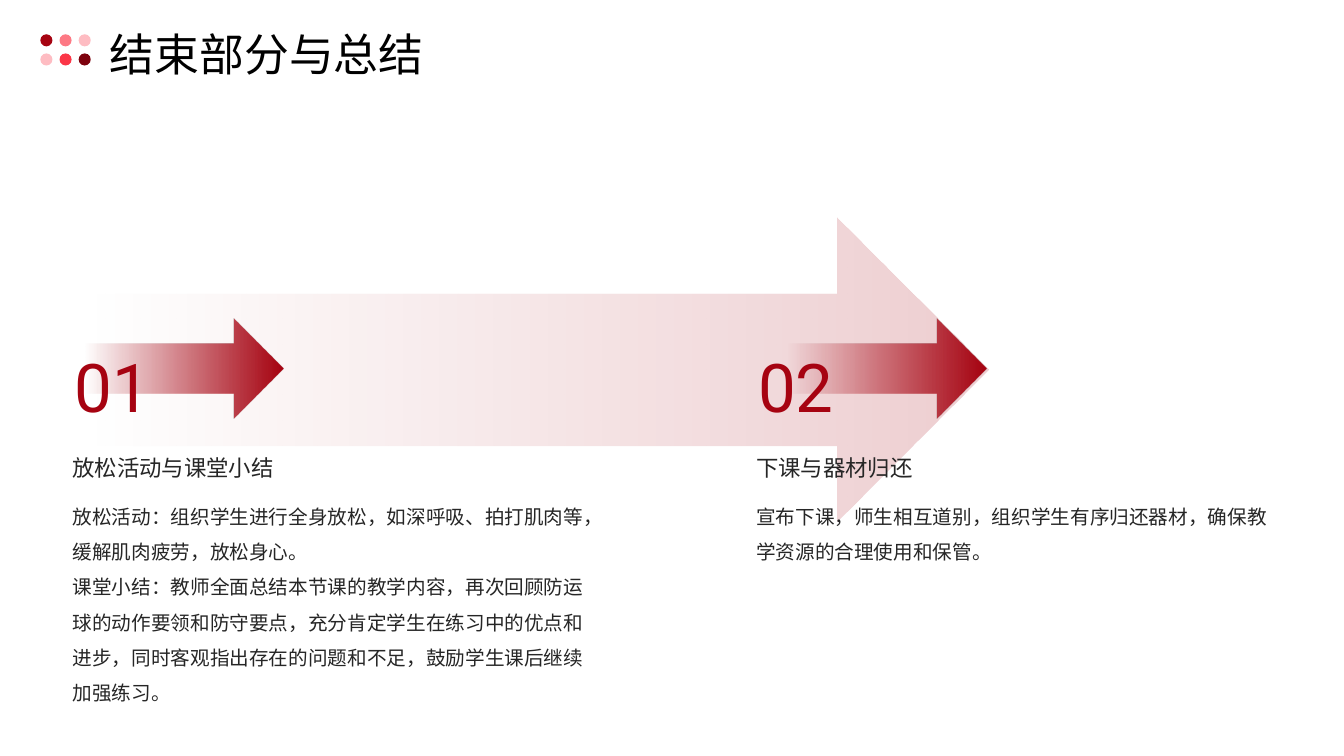
from dataclasses import dataclass

from lxml import etree
from pptx import Presentation
from pptx.dml.color import RGBColor
from pptx.enum.shapes import MSO_SHAPE as Shape
from pptx.enum.text import MSO_ANCHOR as Anchor
from pptx.oxml.ns import qn
from pptx.util import Inches, Pt


@dataclass(frozen=True)
class Theme:
    page: str = "FAFAFA"
    panel: str = "FFFFFF"
    accent: str = "A60311"
    ink: str = "262626"
    title_ink: str = "000000"
    dots: tuple = (("A60311", "FD7984", "FEBCC2"),
                   ("FEBCC2", "FB3647", "7D020D"))
    cjk: str = "Noto Sans CJK SC"
    digits: str = "Roboto"
    title_size: int = 32
    number_size: int = 48
    heading_size: int = 16
    body_size: int = 14


THEME = Theme()

STEPS = (
    # left, arrow offset, number, heading, body lines
    (0.72, 0, "01", "放松活动与课堂小结",
     ("放松活动：组织学生进行全身放松，如深呼吸、拍打肌肉等，缓解肌肉疲劳，放松身心。",
      "课堂小结：教师全面总结本节课的教学内容，再次回顾防运球的动作要领和防守要点，"
      "充分肯定学生在练习中的优点和进步，同时客观指出存在的问题和不足，鼓励学生课后继续加强练习。")),
    (7.5, 0.19, "02", "下课与器材归还",
     ("宣布下课，师生相互道别，组织学生有序归还器材，确保教学资源的合理使用和保管。",)),
)


def add_plain(slide, kind, left, top, width, height, color=None):
    shape = slide.shapes.add_shape(
        kind, Inches(left), Inches(top), Inches(width), Inches(height))
    shape.shadow.inherit = False
    shape.line.fill.background()
    if color:
        shape.fill.solid()
        shape.fill.fore_color.rgb = RGBColor.from_string(color)
    return shape


def add_fading_arrow(slide, left, top, width, height, start, opacity):
    """Right arrow that fades in from clear at start to opacity percent."""
    arrow = add_plain(slide, Shape.RIGHT_ARROW, left, top, width, height)
    arrow.fill.gradient()
    arrow.fill.gradient_angle = 0
    for stop, position in zip(arrow.fill.gradient_stops, (start, 1)):
        stop.position = position
        stop.color.rgb = RGBColor.from_string(THEME.accent)
    colors = arrow._element.spPr.iter(qn("a:srgbClr"))
    for color, percent in zip(colors, (0, opacity)):
        etree.SubElement(color, qn("a:alpha")).set("val", str(percent * 1000))


def add_text(slide, left, top, width, height, lines, size, color,
             font=THEME.cjk, anchor=Anchor.MIDDLE, spacing=1.5):
    frame = slide.shapes.add_textbox(
        Inches(left), Inches(top), Inches(width), Inches(height)).text_frame
    frame.word_wrap = True
    frame.vertical_anchor = anchor
    frame.margin_left = frame.margin_right = 0
    frame.margin_top = frame.margin_bottom = 0
    paragraph = frame.paragraphs[0]
    paragraph.line_spacing = spacing
    for index, line in enumerate(lines):
        if index:
            paragraph.add_line_break()
        run = paragraph.add_run()
        run.text = line
        run.font.size = Pt(size)
        run.font.color.rgb = RGBColor.from_string(color)
        run.font.name = font
        east_asian = etree.SubElement(run.font._element, qn("a:ea"))
        east_asian.set("typeface", font)


def add_header(slide, left, top):
    add_text(slide, left + 0.69, top - 0.1, 11.84, 0.47, ["结束部分与总结"],
             THEME.title_size, THEME.title_ink, spacing=1.2)
    # Dot grid
    pitch, diameter = 0.19, 0.12
    for row, colors in enumerate(THEME.dots):
        for column, color in enumerate(colors):
            add_plain(slide, Shape.OVAL, left + column * pitch,
                      top + row * pitch, diameter, diameter, color)


def add_step(slide, left, top, arrow_offset, number, heading, body):
    width = 5.1
    add_fading_arrow(slide, left + arrow_offset, top + 0.19, 2.09, 0.99,
                     0.06, 100)
    add_text(slide, left, top + 1.92, width, 1.82, body,
             THEME.body_size, THEME.ink, anchor=Anchor.TOP)
    add_text(slide, left, top + 1.26, width, 0.69, [heading],
             THEME.heading_size, THEME.ink)
    add_text(slide, left + 0.02, top, 2.53, 1.31, [number],
             THEME.number_size, THEME.accent, font=THEME.digits)


def main():
    deck = Presentation()
    deck.slide_width, deck.slide_height = Inches(13.33), Inches(7.5)
    slide = deck.slides.add_slide(deck.slide_layouts[6])

    # Backdrop
    slide.background.fill.solid()
    slide.background.fill.fore_color.rgb = RGBColor.from_string(THEME.page)
    add_plain(slide, Shape.RECTANGLE, 0, 0, 13.33, 7.5, THEME.panel)
    add_fading_arrow(slide, 0.7, 2.16, 9.1, 3.01, 0, 20)

    # Steps along the arrow
    for left, *content in STEPS:
        add_step(slide, left, 2.97, *content)

    add_header(slide, 0.4, 0.34)
    deck.save("out.pptx")


if __name__ == "__main__":
    main()
